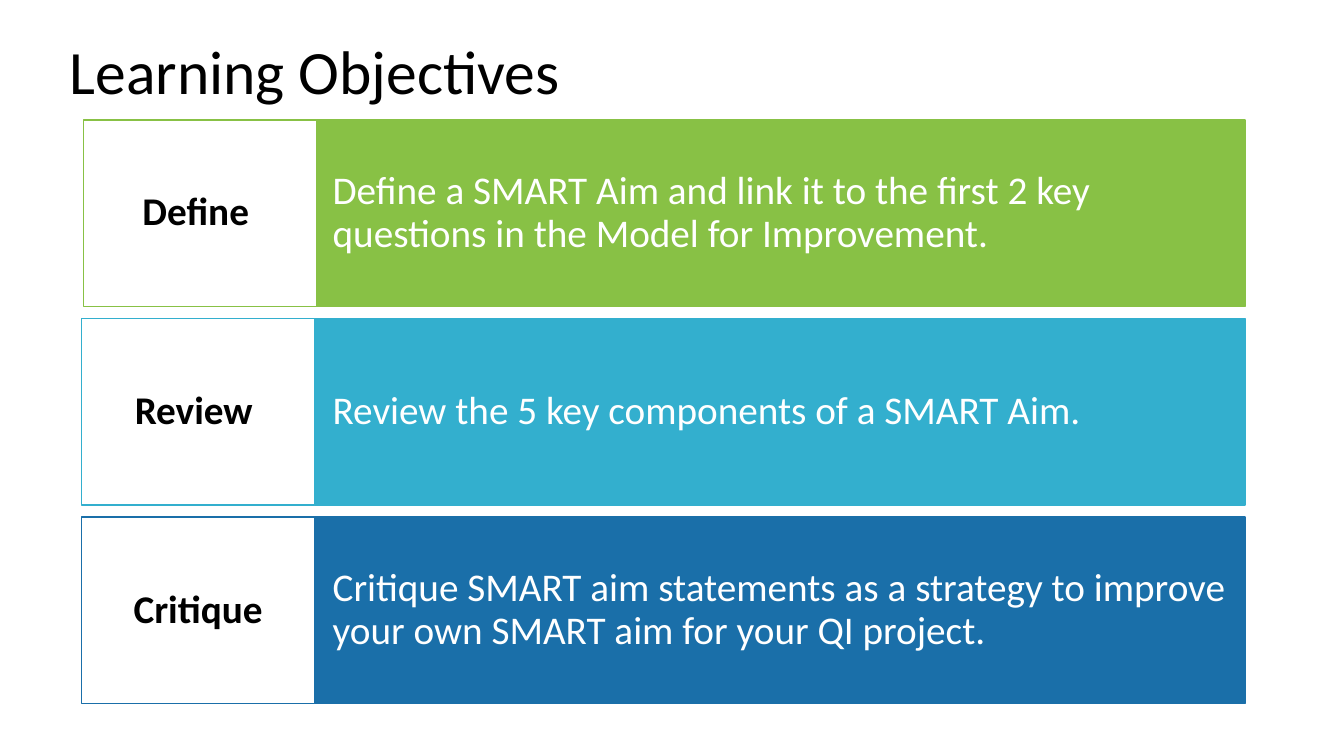
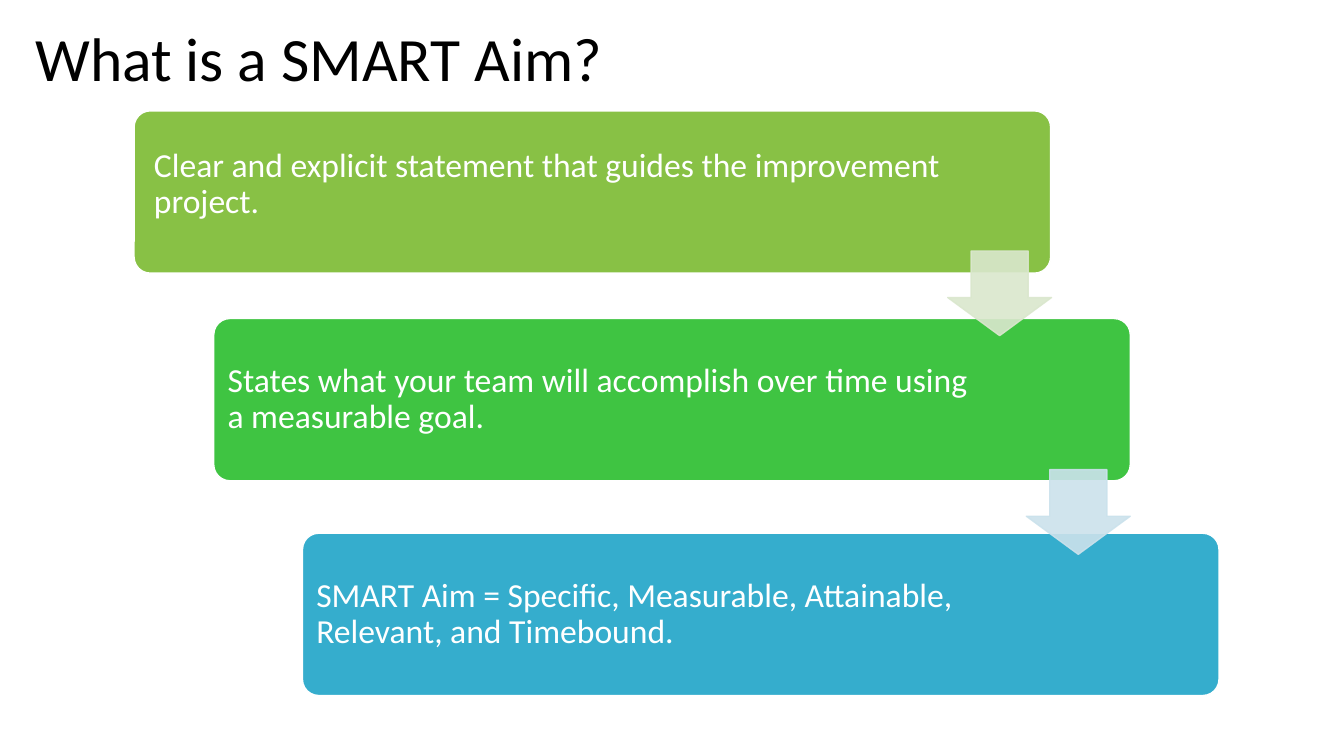
from pptx import Presentation
from pptx.dml.color import RGBColor
from pptx.enum.shapes import MSO_SHAPE
from pptx.enum.text import MSO_ANCHOR, MSO_AUTO_SIZE, PP_ALIGN
from pptx.oxml.ns import qn
from pptx.util import Pt
from lxml.etree import SubElement

PX = 9144
HUES = {
    "black": "000000", "white": "FFFFFF", "lime": "88C145", "green": "3FC442",
    "teal": "33AFCE", "sky": "35ADCD", "blue": "1A6FA9",
    "pale lime": "DAE7CD", "pale blue": "CBE2EC",
}


def hue(name):
    return RGBColor.from_string(HUES[name])


def apply(item, **values):
    for key, value in values.items():
        setattr(item, key, value)


class Deck:
    """Holds the shared style and the current slide."""

    def __init__(self):
        self.file = Presentation()
        apply(self.file, slide_width=1333 * PX, slide_height=750 * PX)

    def label(self, shape, text, size, color, pad, bold=False,
              align=PP_ALIGN.LEFT, anchor=MSO_ANCHOR.MIDDLE):
        frame = shape.text_frame
        sides = ("margin_left", "margin_top", "margin_right", "margin_bottom")
        apply(frame, text=text, word_wrap=True, auto_size=MSO_AUTO_SIZE.NONE,
              vertical_anchor=anchor, **{s: p * PX for s, p in zip(sides, pad)})
        line = frame.paragraphs[0]
        apply(line, alignment=align, line_spacing=0.9)
        apply(line.runs[0].font, name="Calibri", size=Pt(size), bold=bold)
        line.runs[0].font.color.rgb = hue(color)

    def page(self, text, box, anchor):
        self.slide = self.file.slides.add_slide(self.file.slide_layouts[5])
        title = self.slide.shapes.title
        sides = ("left", "top", "width", "height")
        apply(title, **{s: n * PX for s, n in zip(sides, box)})
        self.label(title, text, 44, "black", (10, 5, 10, 5), anchor=anchor)

    def shape(self, kind, box, fill, edge, *bends):
        item = self.slide.shapes.add_shape(kind, *(n * PX for n in box))
        item.shadow.inherit = False
        item.fill.solid()
        item.fill.fore_color.rgb = hue(fill)
        item.line.color.rgb = hue(edge)
        item.line.width = Pt(1)
        for spot, bend in enumerate(bends):
            item.adjustments[spot] = bend
        return item

    def row(self, left, top, color, name, text):
        body = self.shape(MSO_SHAPE.RECTANGLE, (312, top, 923, 185), color, color)
        self.label(body, text, 28, "white", (18, 47, 18, 47))
        head = self.shape(MSO_SHAPE.RECTANGLE, (left, top, 231, 185), "white", color)
        self.label(head, name, 28, "black", (12, 18, 12, 18), True, PP_ALIGN.CENTER)

    def card(self, left, top, color, pad, text):
        item = self.shape(MSO_SHAPE.ROUNDED_RECTANGLE, (left, top, 909, 161),
                          color, "white", 0.1)
        self.label(item, text, 24, "white", pad)

    def arrow(self, left, top, color):
        item = self.shape(MSO_SHAPE.DOWN_ARROW, (left, top, 103, 84),
                          color, color, 0.55, 0.45)
        for tint in item._element.spPr.iter(qn("a:srgbClr")):
            SubElement(tint, qn("a:alpha")).set("val", "90000")


def main():
    deck = Deck()
    deck.page("Learning Objectives", (59, 30, 862, 88), MSO_ANCHOR.MIDDLE)
    rows = (
        (83, "lime", "Define ", "Define a SMART Aim and link it to the first 2 key "
         "questions in the Model for Improvement."),
        (81, "teal", "Review ", "Review the 5 key components of a SMART Aim."),
        (81, "blue", "Critique", "Critique SMART aim statements as a strategy to "
         "improve your own SMART aim for your QI project."),
    )
    for spot, (left, *rest) in enumerate(rows):
        deck.row(left, 119 + 197 * spot, *rest)

    deck.page("What is a SMART Aim?", (25, -12, 862, 111), MSO_ANCHOR.BOTTOM)
    pad = (9, 14, 144, 14)
    cards = (
        (133, 110, "lime", (15, 0, 55, 14),
         "Clear and explicit statement that guides the improvement project."),
        (212, 316, "green", pad,
         "States what your team will accomplish over time using a measurable goal."),
        (300, 529, "sky", pad,
         "SMART Aim = Specific, Measurable, Attainable, Relevant, and Timebound."),
    )
    for card in cards:
        deck.card(*card)
    for arrow in ((940, 249, "pale lime"), (1018, 466, "pale blue")):
        deck.arrow(*arrow)
    deck.file.save("out.pptx")


if __name__ == "__main__":
    main()
